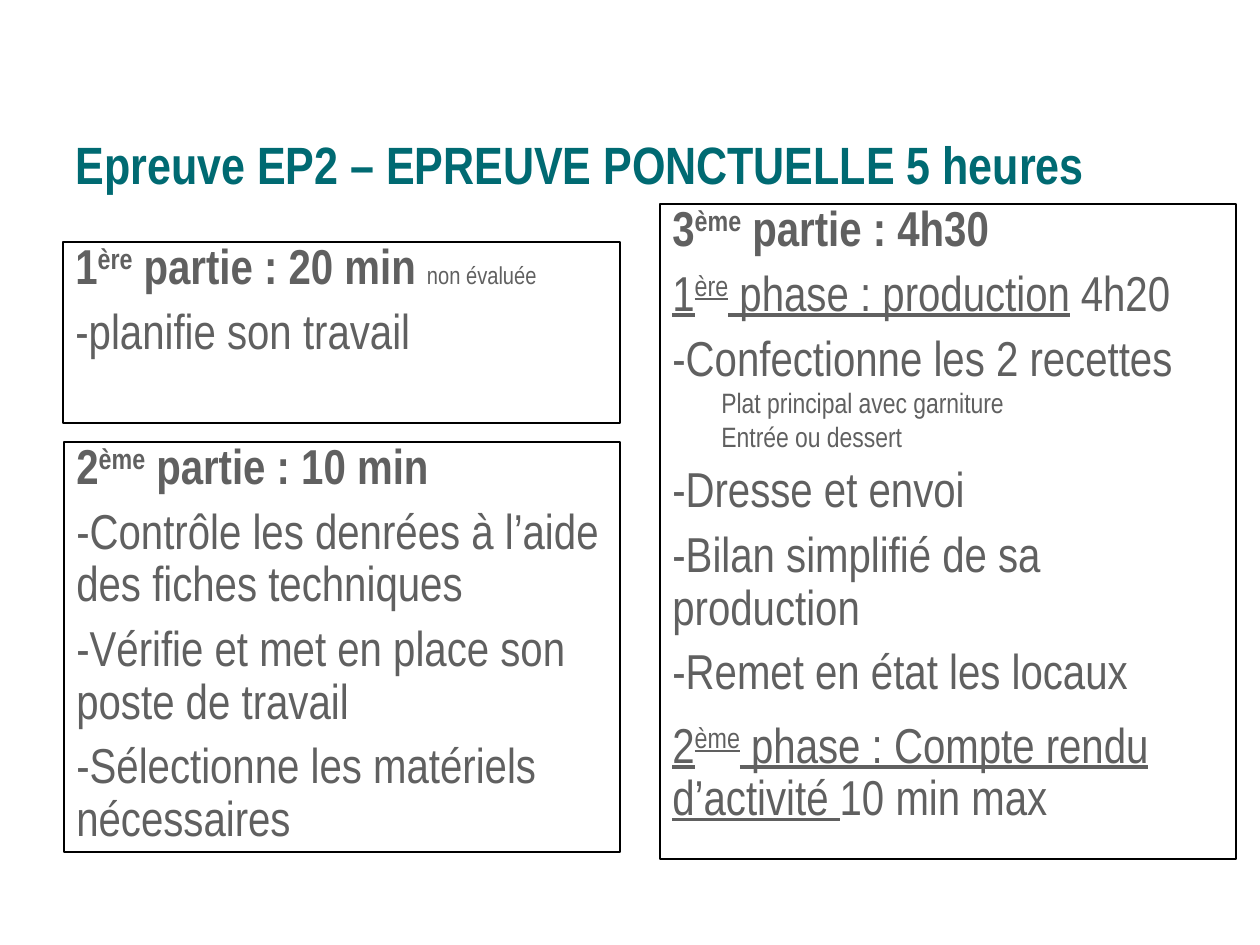
from pptx import Presentation
from pptx.dml.color import RGBColor
from pptx.enum.shapes import MSO_SHAPE
from pptx.enum.text import MSO_ANCHOR as ANCHOR, MSO_AUTO_SIZE as AUTOSIZE, PP_ALIGN as ALIGN
from pptx.util import Emu, Pt

# Content: a paragraph is (kind, runs), a run is (text, styles)
TITLE = "Epreuve EP2 – EPREUVE PONCTUELLE 5 heures"


def heading(number, suffix, text, *extra):
    return ("item", [(number, "bold"), (suffix, "bold sup"), (text, "bold"), *extra])


def phase(kind, number, suffix, text, duration):
    return (kind, [(number, "line"), (suffix, "line sup"), (text, "line"), (duration, "")])


def plain(kind, *lines):
    return [(kind, [(line, "")]) for line in lines]


BOXES = [  # left, top, width, height in px, then paragraphs
    ((63, 242, 557, 181), [
        heading("1", "ère", " partie : 20 min ", ("non évaluée", "note")),
        *plain("item", "-planifie son travail"),
    ]),
    ((64, 442, 556, 410), [
        heading("2", "ème", " partie : 10 min"),
        *plain("item",
               "-Contrôle les denrées à l’aide des fiches techniques",
               "-Vérifie et met en place son poste de travail",
               "-Sélectionne les matériels nécessaires"),
    ]),
    ((660, 204, 576, 655), [
        heading("3", "ème", " partie : 4h30"),
        phase("item", "1", "ère", " phase : production", " 4h20"),
        *plain("item", "-Confectionne les 2 recettes"),
        *plain("detail", "Plat principal avec garniture", "Entrée ou dessert"),
        *plain("item",
               "-Dresse et envoi",
               "-Bilan simplifié de sa production",
               "-Remet en état les locaux"),
        phase("last", "2", "ème", " phase : Compte rendu d’activité ", "10 min max"),
    ]),
]

# Theme
THEME = {
    "font": "Arial Narrow",
    "title": RGBColor(0x00, 0x6A, 0x72),
    "text": RGBColor(0x60, 0x60, 0x60),
    "border": RGBColor(0, 0, 0),
    "title_size": Pt(30),
    "note_size": Pt(14),
    "border_width": Pt(0.75),
}
KINDS = {  # size, line spacing, space before, first-line indent in px
    "item": (Pt(28), Pt(30), Pt(7), 0),
    "detail": (Pt(16), 1.0, Pt(0), 49),
    "last": (Pt(28), Pt(30), Pt(12), 0),
}
PX = 914400 / 126


def px(n):
    return Emu(round(n * PX))


def apply(target, **values):
    for name, value in values.items():
        setattr(target, name, value)


def set_frame(tf, anchor):
    apply(tf, word_wrap=True, auto_size=AUTOSIZE.NONE, vertical_anchor=anchor,
          margin_left=Emu(91440), margin_right=Emu(91440), margin_top=0, margin_bottom=0)


def add_run(p, text, size, color, styles=""):
    r = p.add_run()
    r.text = text
    styles = styles.split()
    apply(r.font, name=THEME["font"], bold="bold" in styles, underline="line" in styles,
          size=THEME["note_size"] if "note" in styles else size)
    r.font.color.rgb = color
    if "sup" in styles:
        r.font._element.set("baseline", "30000")


def add_box(slide, place, paragraphs):
    sp = slide.shapes.add_shape(MSO_SHAPE.RECTANGLE, *map(px, place))
    sp.shadow.inherit = False
    sp.fill.background()
    sp.line.color.rgb = THEME["border"]
    sp.line.width = THEME["border_width"]
    tf = sp.text_frame
    set_frame(tf, ANCHOR.TOP)
    for i, (kind, runs) in enumerate(paragraphs):
        size, spacing, before, indent = KINDS[kind]
        p = tf.add_paragraph() if i else tf.paragraphs[0]
        apply(p, alignment=ALIGN.LEFT, line_spacing=spacing,
              space_before=before if i else Pt(0))
        if indent:
            p._p.get_or_add_pPr().set("indent", str(px(indent)))
        for text, styles in runs:
            add_run(p, text, size, THEME["text"], styles)


def main():
    prs = Presentation()
    apply(prs, slide_width=px(1260), slide_height=px(945))
    slide = prs.slides.add_slide(prs.slide_layouts[5])

    # Title
    title = slide.shapes.title
    apply(title, left=px(63), top=px(95), width=px(1134), height=px(142))
    set_frame(title.text_frame, ANCHOR.MIDDLE)
    p = title.text_frame.paragraphs[0]
    apply(p, alignment=ALIGN.LEFT, line_spacing=Pt(33))
    add_run(p, TITLE, THEME["title_size"], THEME["title"], "bold")

    # Boxes for the three parts
    for place, paragraphs in BOXES:
        add_box(slide, place, paragraphs)

    prs.save("out.pptx")


if __name__ == "__main__":
    main()
